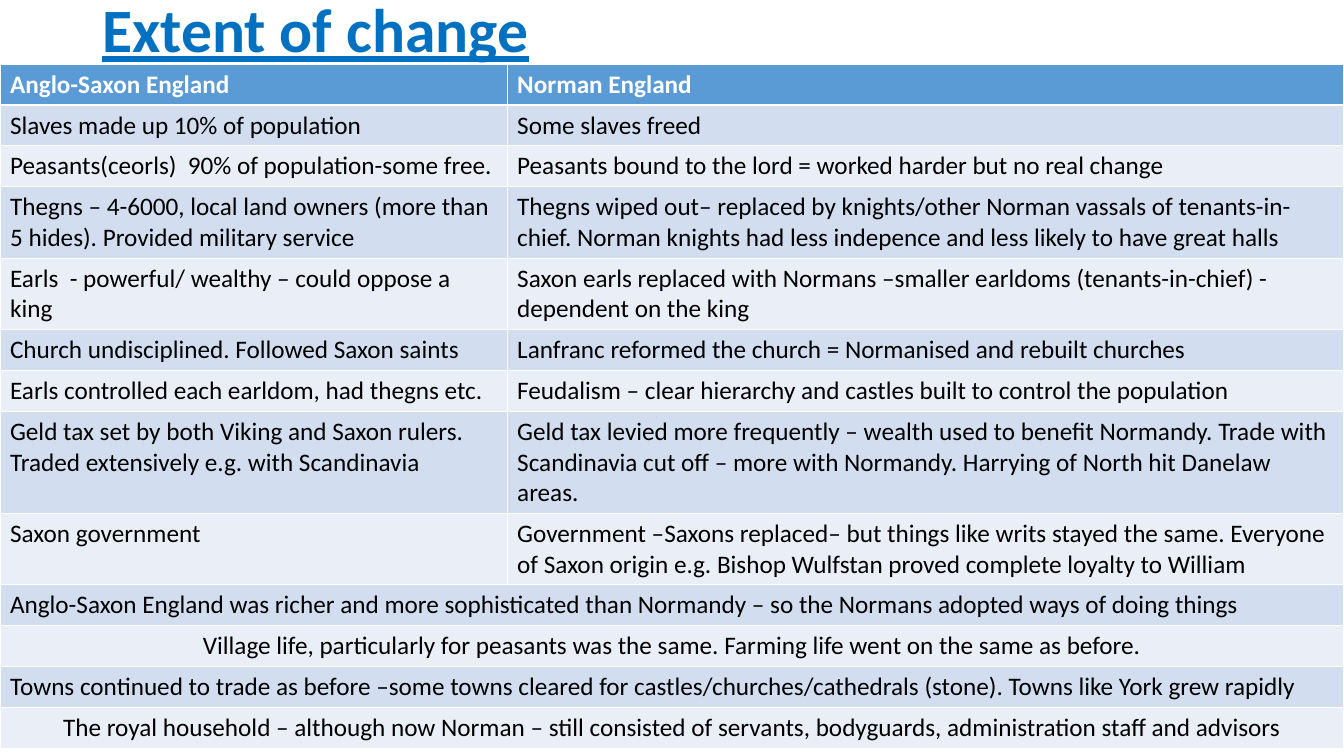
from pptx import Presentation
from pptx.dml.color import RGBColor
from pptx.enum.text import MSO_ANCHOR, PP_ALIGN
from pptx.util import Pt

PX = 9525
WIDTH, HEIGHT = 1280, 720
FONT = "Calibri"
LEFT, CENTER = PP_ALIGN.LEFT, PP_ALIGN.CENTER
MIDDLE = MSO_ANCHOR.MIDDLE

WHITE = RGBColor(0xFF, 0xFF, 0xFF)
BLACK = RGBColor(0x00, 0x00, 0x00)
TITLE_BLUE = RGBColor(0x00, 0x70, 0xC0)
HEADER_BLUE = RGBColor(0x5B, 0x9B, 0xD5)
BANDS = [RGBColor(0xEA, 0xEF, 0xF7), RGBColor(0xD2, 0xDE, 0xEF)]

TABLE_TOP = 61
COLUMN_WIDTHS = [483, 797]
ROW_PADDING, LINE_HEIGHT = 10, 29

# Lines of text in the row, then the Saxon and the Norman side
COMPARISONS = [
    (1, "Anglo-Saxon England", "Norman England"),
    (1, "Slaves made up 10% of population", "Some slaves freed"),
    (1, "Peasants(ceorls)  90% of population-some free.",
     "Peasants bound to the lord = worked harder but no real change"),
    (2, "Thegns – 4-6000, local land owners (more than 5 hides). Provided military service",
     "Thegns wiped out– replaced by knights/other Norman vassals of tenants-in-chief. "
     "Norman knights had less indepence and less likely to have great halls"),
    (2, "Earls  - powerful/ wealthy – could oppose a king",
     "Saxon earls replaced with Normans –smaller earldoms (tenants-in-chief) - "
     "dependent on the king"),
    (1, "Church undisciplined. Followed Saxon saints",
     "Lanfranc reformed the church = Normanised and rebuilt churches"),
    (1, "Earls controlled each earldom, had thegns etc.",
     "Feudalism – clear hierarchy and castles built to control the population"),
    (3, "Geld tax set by both Viking and Saxon rulers. "
     "Traded extensively e.g. with Scandinavia",
     "Geld tax levied more frequently – wealth used to benefit Normandy. "
     "Trade with Scandinavia cut off – more with Normandy. "
     "Harrying of North hit Danelaw areas."),
    (2, "Saxon government",
     "Government –Saxons replaced– but things like writs stayed the same. "
     "Everyone of Saxon origin e.g. Bishop Wulfstan proved complete loyalty to William"),
]
# One-line rows that span both columns
CONTINUITIES = [
    (LEFT, "Anglo-Saxon England was richer and more sophisticated than Normandy – "
     "so the Normans adopted ways of doing things"),
    (CENTER, "Village life, particularly for peasants was the same. "
     "Farming life went on the same as before."),
    (LEFT, "Towns continued to trade as before –some towns cleared for "
     "castles/churches/cathedrals (stone). Towns like York grew rapidly"),
    (CENTER, "The royal household – although now Norman – still consisted of servants, "
     "bodyguards, administration staff and advisors"),
]


def add_run(paragraph, text, size, color, bold):
    run = paragraph.add_run()
    run.text = text
    run.font.name = FONT
    run.font.size = Pt(size)
    run.font.color.rgb = color
    run.font.bold = bold
    return run


prs = Presentation()
prs.slide_width, prs.slide_height = WIDTH * PX, HEIGHT * PX
slide = prs.slides.add_slide(prs.slide_layouts[6])

title = slide.shapes.add_textbox(88 * PX, -47 * PX, 1104 * PX, 156 * PX).text_frame
title.word_wrap = True
title.vertical_anchor = MIDDLE
title.paragraphs[0].line_spacing = 0.9
add_run(title.paragraphs[0], "Extent of change", 44, TITLE_BLUE, True).font.underline = True

line_counts = [lines for lines, *_ in COMPARISONS] + [1] * len(CONTINUITIES)
row_heights = [ROW_PADDING + LINE_HEIGHT * lines for lines in line_counts]
table = slide.shapes.add_table(
    len(row_heights), len(COLUMN_WIDTHS),
    0, TABLE_TOP * PX, WIDTH * PX, sum(row_heights) * PX).table
for column, width in zip(table.columns, COLUMN_WIDTHS):
    column.width = width * PX

for r, height in enumerate(row_heights):
    table.rows[r].height = height * PX
    for cell in table.rows[r].cells:
        cell.fill.solid()
        cell.fill.fore_color.rgb = BANDS[r % 2] if r else HEADER_BLUE

for r, (_, *sides) in enumerate(COMPARISONS):
    for c, text in enumerate(sides):
        add_run(table.cell(r, c).text_frame.paragraphs[0], text, 18,
                BLACK if r else WHITE, r == 0)

for r, (alignment, text) in enumerate(CONTINUITIES, len(COMPARISONS)):
    table.cell(r, 0).merge(table.cell(r, 1))
    paragraph = table.cell(r, 0).text_frame.paragraphs[0]
    paragraph.alignment = alignment
    add_run(paragraph, text, 18, BLACK, False)

prs.save("out.pptx")
